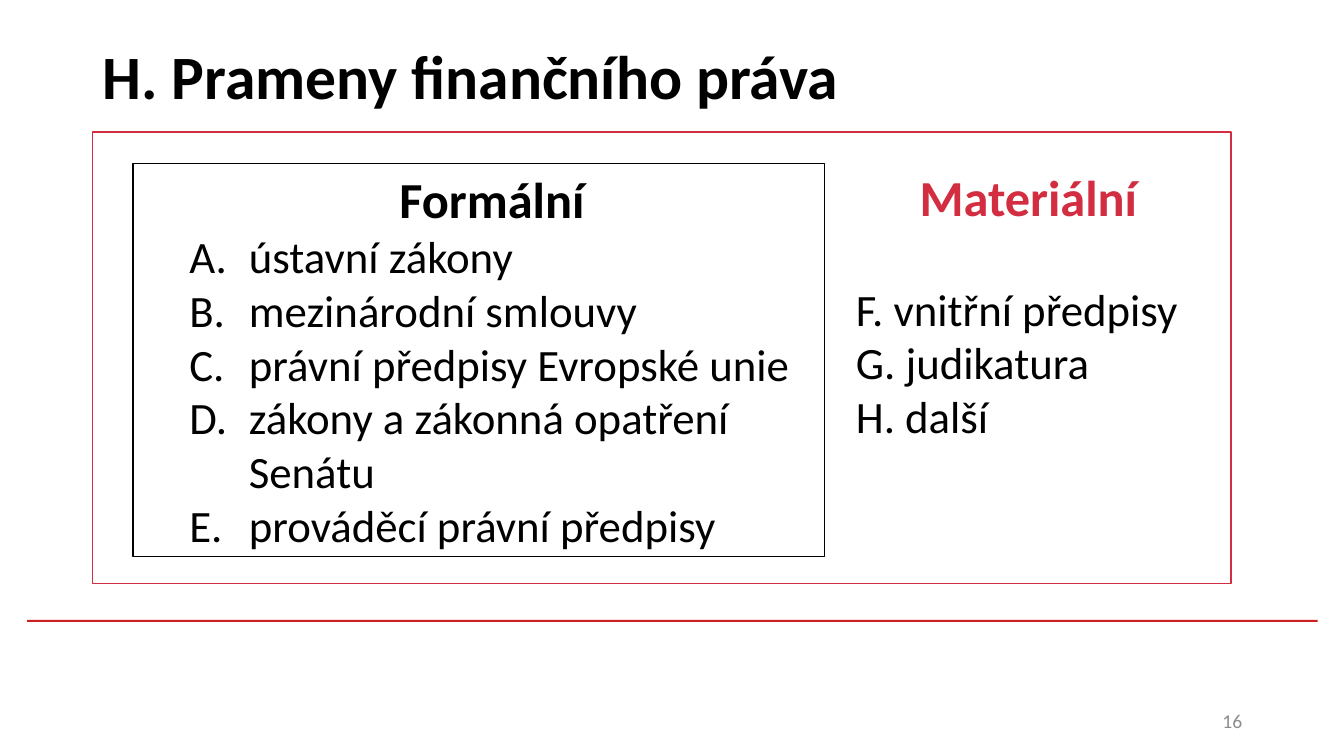
from lxml.etree import SubElement
from pptx import Presentation
from pptx.dml.color import RGBColor
from pptx.enum.shapes import MSO_SHAPE as Shape
from pptx.enum.text import MSO_ANCHOR as Anchor, PP_ALIGN as Align
from pptx.oxml.ns import qn
from pptx.util import Inches, Pt

BLACK = "000000"
WHITE = "FFFFFF"
CRIMSON = "D22D40"
RULE_RED = "CD1F21"
GREY = "8C8C8C"

FORMAL_SOURCES = [
    "ústavní zákony",
    "mezinárodní smlouvy",
    "právní předpisy Evropské unie",
    "zákony a zákonná opatření Senátu",
    "prováděcí právní předpisy",
]
MATERIAL_SOURCES = ["F. vnitřní předpisy", "G. judikatura", "H. další"]


def color(value):
    return RGBColor.from_string(value)


def add_rectangle(page, left, top, width, height, fill, line=None):
    box = page.shapes.add_shape(
        Shape.RECTANGLE, Inches(left), Inches(top), Inches(width), Inches(height)
    )
    box.shadow.inherit = False
    box.fill.solid()
    box.fill.fore_color.rgb = color(fill)
    if line:
        box.line.color.rgb = color(line)
        box.line.width = Pt(1)
    else:
        box.line.fill.background()


def add_text_frame(page, left, top, width, height, anchor=Anchor.TOP):
    box = page.shapes.add_textbox(
        Inches(left), Inches(top), Inches(width), Inches(height)
    )
    frame = box.text_frame
    frame.word_wrap = True
    frame.vertical_anchor = anchor
    return frame


def write(para, text, size, ink=BLACK, bold=False, align=Align.LEFT):
    para.text = text
    para.alignment = align
    for span in para.runs:
        span.font.name = "Calibri"
        span.font.size = Pt(size)
        span.font.bold = bold
        span.font.color.rgb = color(ink)


def add_lettering(para, indent):
    properties = para._p.get_or_add_pPr()
    properties.set("marL", str(Inches(indent)))
    properties.set("indent", str(-Inches(indent)))
    SubElement(properties, qn("a:buFont"), typeface="+mj-lt")
    SubElement(properties, qn("a:buAutoNum"), type="alphaUcPeriod")


def add_formal_sources(page):
    add_rectangle(page, 1.32, 1.62, 6.86, 3.9, WHITE, BLACK)
    frame = add_text_frame(page, 1.78, 1.62, 6.2, 3.94)
    write(frame.paragraphs[0], "Formální", 36, bold=True, align=Align.CENTER)
    for source in FORMAL_SOURCES:
        para = frame.add_paragraph()
        add_lettering(para, 0.59)
        write(para, source, 32)


def add_material_sources(page):
    frame = add_text_frame(page, 8.39, 1.6, 3.62, 3.47)
    write(frame.paragraphs[0], "Materiální", 36, CRIMSON, True, Align.CENTER)
    for source in MATERIAL_SOURCES:
        write(frame.add_paragraph(), source, 32, align=Align.JUSTIFY)
    frame.paragraphs[1].space_before = Pt(39)


def main():
    deck = Presentation()
    deck.slide_width = Inches(13.33)
    deck.slide_height = Inches(7.5)
    page = deck.slides.add_slide(deck.slide_layouts[6])

    add_rectangle(page, 0.27, 6.15, 12.8, 0.02, RULE_RED)
    title = add_text_frame(page, 0.92, 0.02, 11.5, 1.45, Anchor.MIDDLE)
    write(title.paragraphs[0], "H. Prameny finančního práva", 44, bold=True)
    number = add_text_frame(page, 9.42, 6.95, 3, 0.4, Anchor.MIDDLE)
    write(number.paragraphs[0], "16", 14, GREY, align=Align.RIGHT)

    add_rectangle(page, 0.92, 1.31, 11.29, 4.48, WHITE, CRIMSON)
    add_material_sources(page)
    add_formal_sources(page)
    deck.save("out.pptx")


if __name__ == "__main__":
    main()
